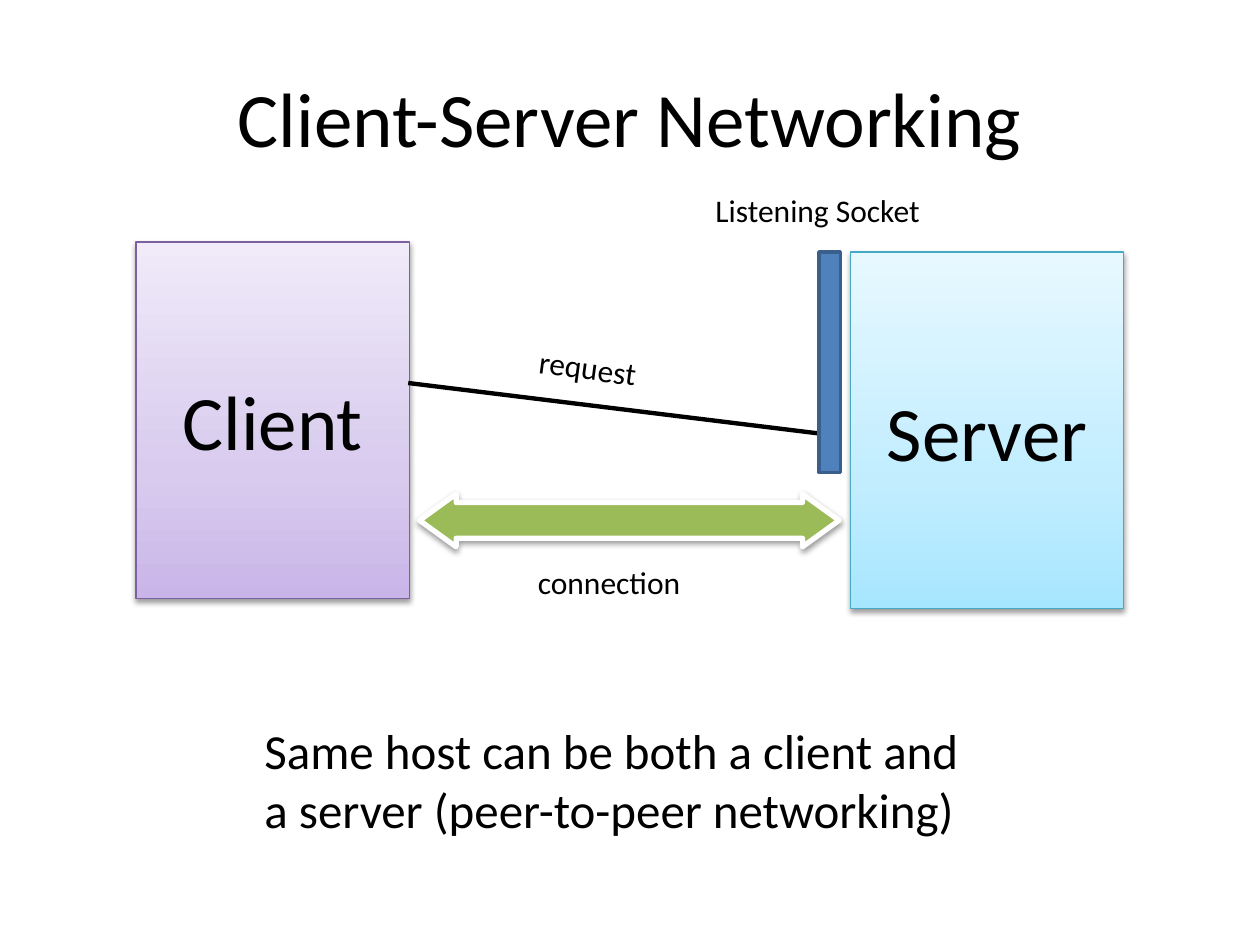
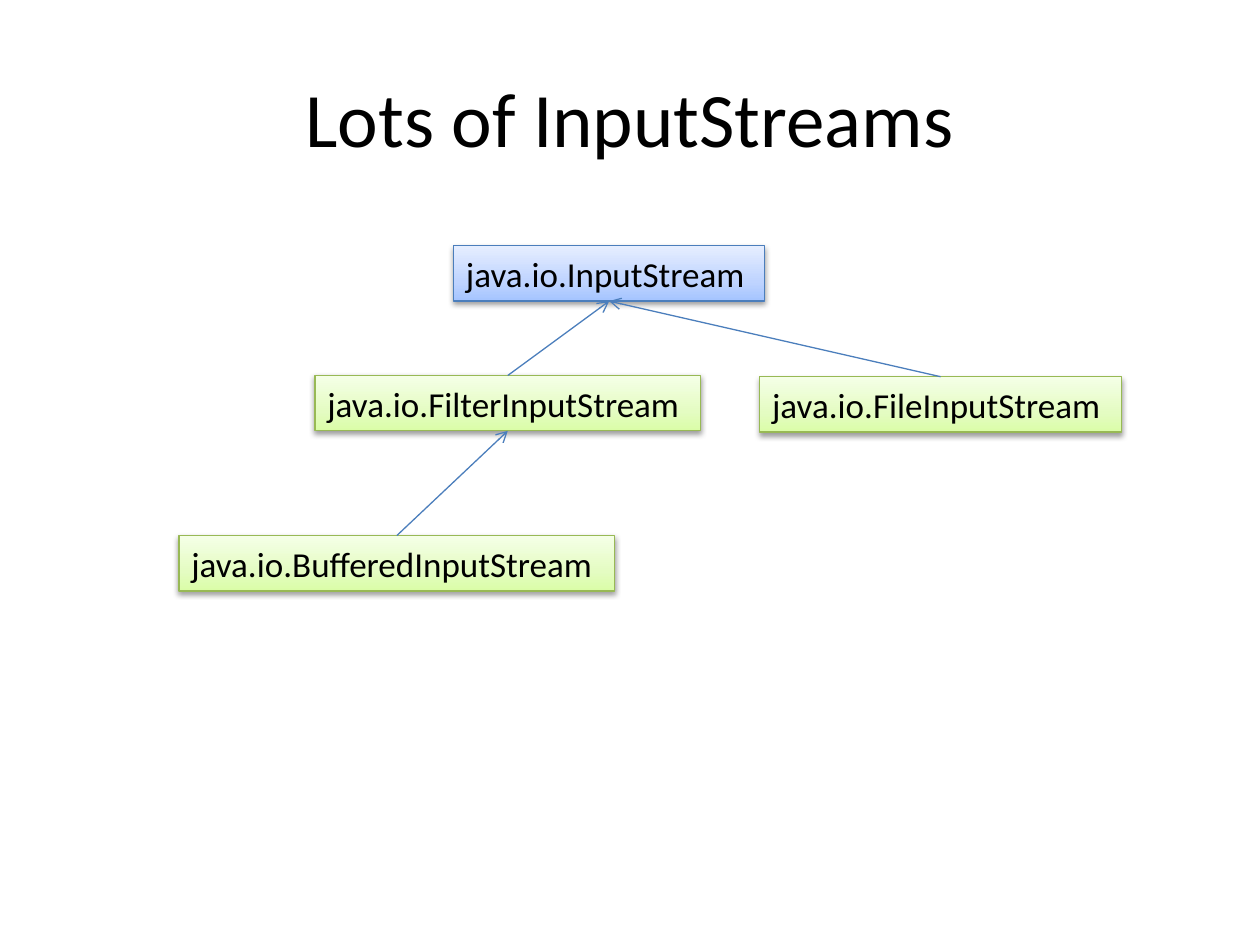
from copy import deepcopy

from lxml.etree import SubElement
from pptx import Presentation
from pptx.dml.color import RGBColor
from pptx.enum.shapes import MSO_CONNECTOR, MSO_SHAPE
from pptx.enum.text import MSO_ANCHOR, PP_ALIGN
from pptx.oxml.ns import qn
from pptx.util import Inches, Pt

FONT = "Calibri"
BLACK = RGBColor(0x00, 0x00, 0x00)
WHITE = RGBColor(0xFF, 0xFF, 0xFF)
GREEN = RGBColor(0x9B, 0xBB, 0x59)
SOCKET_BLUE = RGBColor(0x4F, 0x81, 0xBD)
SOCKET_EDGE = RGBColor(0x3A, 0x5F, 0x8C)
ARROW_BLUE = RGBColor(0x4B, 0x7E, 0xBC)

# Each palette: bottom, middle and top of the gradient, then the outline
PURPLE_BOX = [RGBColor.from_string(c) for c in ("C9B5E8", "D8CBEE", "F0EAF9", "7D60A0")]
CYAN_BOX = [RGBColor.from_string(c) for c in ("A7E6FF", "C1EDFF", "E7F8FF", "46AAC5")]
BLUE_BOX = [RGBColor.from_string(c) for c in ("A4C4FF", "BFD4FF", "E6EEFF", "4B7EBC")]
GREEN_BOX = [RGBColor.from_string(c) for c in ("DAFDA7", "E4FCC2", "F5FFE7", "98B955")]


def style_shape(shape, colors, line_width, shadow=True):
    """Fill with one colour or a three-stop gradient; the last colour is the outline."""
    *fills, outline = colors
    if len(fills) == 1:
        shape.fill.solid()
        shape.fill.fore_color.rgb = fills[0]
    else:
        shape.fill.gradient()
        shape.fill.gradient_angle = 90
        stops = shape.element.spPr.find(qn("a:gradFill")).find(qn("a:gsLst"))
        stops.insert(1, deepcopy(stops[0]))
        for stop, color, position in zip(shape.fill.gradient_stops, fills, (0, 0.35, 1)):
            stop.color.rgb = color
            stop.position = position
    shape.line.color.rgb = outline
    shape.line.width = Pt(line_width)
    shape.shadow.inherit = False
    if shadow:
        effects = shape.element.spPr.find(qn("a:effectLst"))
        outer = SubElement(effects, qn("a:outerShdw"), blurRad="40000", dist="20000",
                           dir="5400000", rotWithShape="0")
        color = SubElement(outer, qn("a:srgbClr"), val="000000")
        SubElement(color, qn("a:alpha"), val="38000")


def write_text(shape, text, size, alignment=PP_ALIGN.LEFT, anchor=MSO_ANCHOR.MIDDLE):
    text_frame = shape.text_frame
    text_frame.text = text
    text_frame.word_wrap = True
    text_frame.vertical_anchor = anchor
    for paragraph in text_frame.paragraphs:
        paragraph.alignment = alignment
        for run in paragraph.runs:
            run.font.name = FONT
            run.font.size = Pt(size)
            run.font.color.rgb = BLACK


presentation = Presentation()
presentation.slide_width = Inches(10)
presentation.slide_height = Inches(7.5)

slides = []
for title_text in ("Client-Server Networking", "Lots of InputStreams"):
    slide = presentation.slides.add_slide(presentation.slide_layouts[5])
    title = slide.shapes.title
    title.left, title.top = Inches(0.5), Inches(0.3)
    title.width, title.height = Inches(9), Inches(1.25)
    write_text(title, title_text, 44, PP_ALIGN.CENTER)
    slides.append(slide)
network_slide, streams_slide = slides

# Client-server diagram
shapes = network_slide.shapes
for host, left, top, palette in (("Client", 1.08, 1.92, PURPLE_BOX),
                                 ("Server", 6.75, 2, CYAN_BOX)):
    box = shapes.add_shape(MSO_SHAPE.RECTANGLE, Inches(left), Inches(top),
                           Inches(2.17), Inches(2.83))
    style_shape(box, palette, 0.75)
    write_text(box, host, 44, PP_ALIGN.CENTER)

request_line = shapes.add_connector(MSO_CONNECTOR.STRAIGHT, Inches(3.24), Inches(3.04),
                                    Inches(6.66), Inches(3.46))
connection_arrow = shapes.add_shape(MSO_SHAPE.LEFT_RIGHT_ARROW, Inches(3.33), Inches(3.92),
                                    Inches(3.33), Inches(0.42))
connection_arrow.adjustments[0] = 0.675
connection_arrow.adjustments[1] = 0.692
style_shape(connection_arrow, (GREEN, WHITE), 3)

for text, left, top, width, height, size, rotation in (
    ("Listening Socket", 5.58, 1.47, 2.12, 0.4, 18, 0),
    ("request", 4.18, 2.72, 1.04, 0.4, 18, 7.6),
    ("connection", 4.17, 4.42, 1.41, 0.4, 18, 0),
    ("Same host can be both a client and\na server (peer-to-peer networking)",
     2, 5.67, 6.23, 1.03, 28, 0),
):
    label = shapes.add_textbox(Inches(left), Inches(top), Inches(width), Inches(height))
    label.rotation = rotation
    write_text(label, text, size, anchor=MSO_ANCHOR.TOP)

listening_socket = shapes.add_shape(MSO_SHAPE.RECTANGLE, Inches(6.5), Inches(2),
                                    Inches(0.17), Inches(1.75))
style_shape(listening_socket, (SOCKET_BLUE, SOCKET_EDGE), 2, shadow=False)

# Class hierarchy
shapes = streams_slide.shapes
class_boxes = {}
for name, left, top, width, palette in (
    ("InputStream", 3.6, 1.95, 2.47, BLUE_BOX),
    ("FilterInputStream", 2.5, 2.98, 3.06, GREEN_BOX),
    ("BufferedInputStream", 1.42, 4.25, 3.46, GREEN_BOX),
    ("FileInputStream", 6.03, 2.99, 2.87, GREEN_BOX),
):
    box = shapes.add_shape(MSO_SHAPE.RECTANGLE, Inches(left), Inches(top),
                           Inches(width), Inches(0.44))
    style_shape(box, palette, 0.75)
    write_text(box, f"java.io.{name}", 20)
    class_boxes[name] = box

arrows = [(request_line, BLACK, 2.5)]
for child, parent in (("BufferedInputStream", "FilterInputStream"),
                      ("FilterInputStream", "InputStream"),
                      ("FileInputStream", "InputStream")):
    arrow = shapes.add_connector(MSO_CONNECTOR.STRAIGHT, 0, 0, 0, 0)
    arrow.begin_connect(class_boxes[child], 0)
    arrow.end_connect(class_boxes[parent], 2)
    arrows.append((arrow, ARROW_BLUE, 0.75))

for arrow, color, width in arrows:
    arrow.line.color.rgb = color
    arrow.line.width = Pt(width)
    SubElement(arrow.line._get_or_add_ln(), qn("a:tailEnd"), type="arrow")
    SubElement(arrow.element.spPr, qn("a:effectLst"))

presentation.save("out.pptx")
